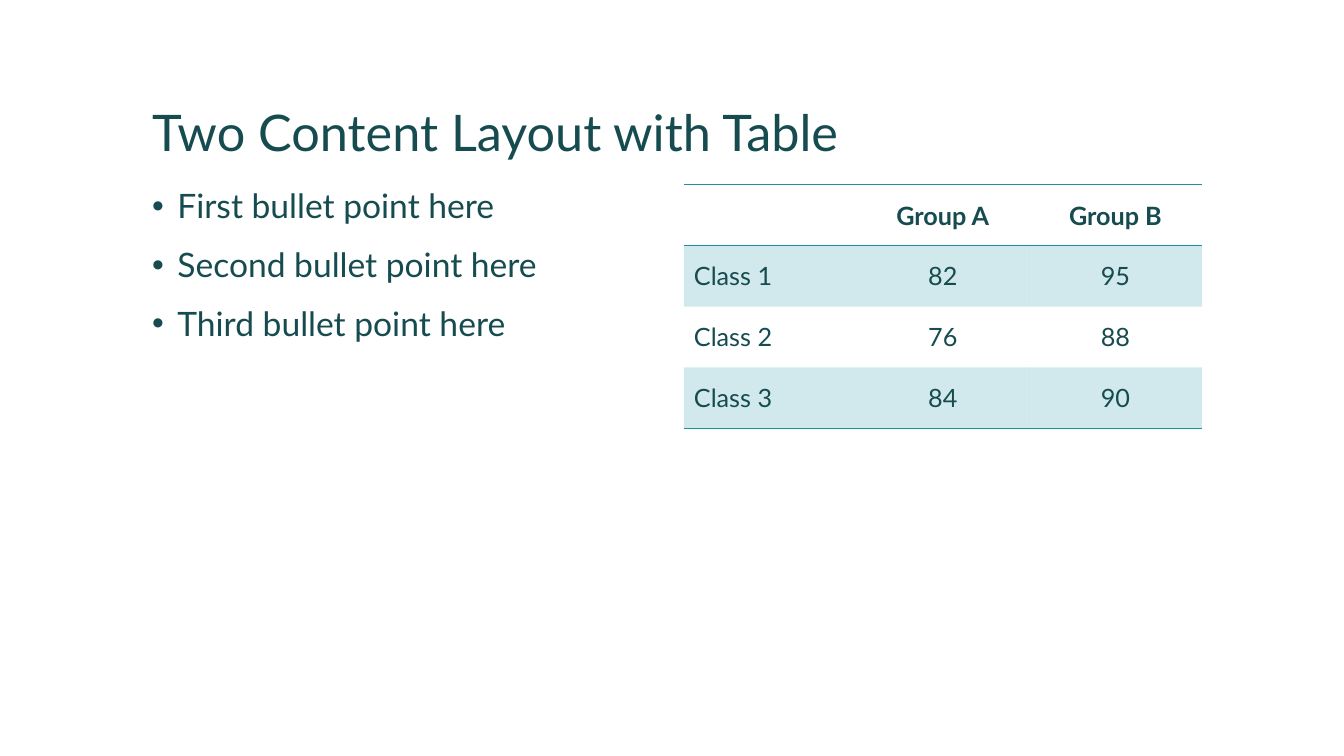
from dataclasses import dataclass

from lxml import etree
from pptx import Presentation
from pptx.dml.color import RGBColor
from pptx.enum.text import MSO_ANCHOR, MSO_AUTO_SIZE, PP_ALIGN
from pptx.oxml.ns import qn
from pptx.util import Pt

LEFT, CENTER = PP_ALIGN.LEFT, PP_ALIGN.CENTER
MIDDLE, BOTTOM = MSO_ANCHOR.MIDDLE, MSO_ANCHOR.BOTTOM
NO_AUTOFIT = MSO_AUTO_SIZE.NONE


@dataclass(frozen=True)
class Theme:
    font: str = "Lato"
    ink: str = "164B4F"
    accent: str = "1B91A1"
    title_size: int = 36
    bullet_size: int = 24
    table_size: int = 18


THEME = Theme()


def add_run(paragraph, text, size, bold=False):
    run = paragraph.add_run()
    run.text = text
    run.font.name = THEME.font
    run.font.size = Pt(size)
    run.font.bold = bold
    run.font.color.rgb = RGBColor.from_string(THEME.ink)


def set_border(cell, side, position, visible):
    properties = cell._tc.get_or_add_tcPr()
    border = etree.Element(qn(f"a:ln{side}"), w=str(Pt(1)))
    if visible:
        fill = etree.SubElement(border, qn("a:solidFill"))
        etree.SubElement(fill, qn("a:srgbClr"), val=THEME.accent)
    else:
        etree.SubElement(border, qn("a:noFill"))
    properties.insert(position, border)


deck = Presentation()
deck.slide_width, deck.slide_height = Pt(960), Pt(540)
slide = deck.slides.add_slide(deck.slide_layouts[1])

heading = slide.shapes.title
heading.left, heading.top, heading.width, heading.height = Pt(101.5), Pt(30), Pt(756), Pt(90)
heading.text_frame.auto_size = NO_AUTOFIT
heading.text_frame.vertical_anchor = BOTTOM
heading_line = heading.text_frame.paragraphs[0]
heading_line.alignment = LEFT
heading_line.line_spacing = 0.9
add_run(heading_line, "Two Content Layout with Table", THEME.title_size)

points = slide.placeholders[1]
points.left, points.top, points.width, points.height = Pt(101.5), Pt(132), Pt(370), Pt(354)
points.text_frame.auto_size = NO_AUTOFIT
for index, ordinal in enumerate(("First", "Second", "Third")):
    if index == 0:
        point = points.text_frame.paragraphs[0]
    else:
        point = points.text_frame.add_paragraph()
    properties = point._p.get_or_add_pPr()
    properties.set("marL", str(Pt(18)))
    properties.set("indent", str(-Pt(18)))
    etree.SubElement(properties, qn("a:buFont"), typeface="Arial")
    etree.SubElement(properties, qn("a:buChar"), char="•")
    point.line_spacing = 0.9
    point.space_before = Pt(16 if index else 0)
    add_run(point, f"{ordinal} bullet point here", THEME.bullet_size)

scores = (
    ("", "Group A", "Group B"),
    ("Class 1", "82", "95"),
    ("Class 2", "76", "88"),
    ("Class 3", "84", "90"),
)
last_row = len(scores) - 1
score_table = slide.shapes.add_table(
    len(scores), len(scores[0]), Pt(488.5), Pt(132), Pt(370), Pt(174)
).table
score_table.first_row = False
score_table.horz_banding = False

for row_index, row in enumerate(scores):
    score_table.rows[row_index].height = Pt(43.5)
    for column_index, value in enumerate(row):
        cell = score_table.cell(row_index, column_index)
        cell.vertical_anchor = MIDDLE
        if row_index % 2:
            cell.fill.solid()
            cell.fill.fore_color.rgb = RGBColor.from_string(THEME.accent)
            tint = cell._tc.tcPr.find(qn("a:solidFill")).find(qn("a:srgbClr"))
            etree.SubElement(tint, qn("a:alpha"), val="20000")
        else:
            cell.fill.background()
        ruled = {"T": row_index in (0, 1), "B": row_index in (0, last_row)}
        for position, side in enumerate("LRTB"):
            set_border(cell, side, position, ruled.get(side, False))
        if value:
            entry = cell.text_frame.paragraphs[0]
            entry.alignment = CENTER if column_index else LEFT
            add_run(entry, value, THEME.table_size, bold=row_index == 0)

deck.save("out.pptx")
